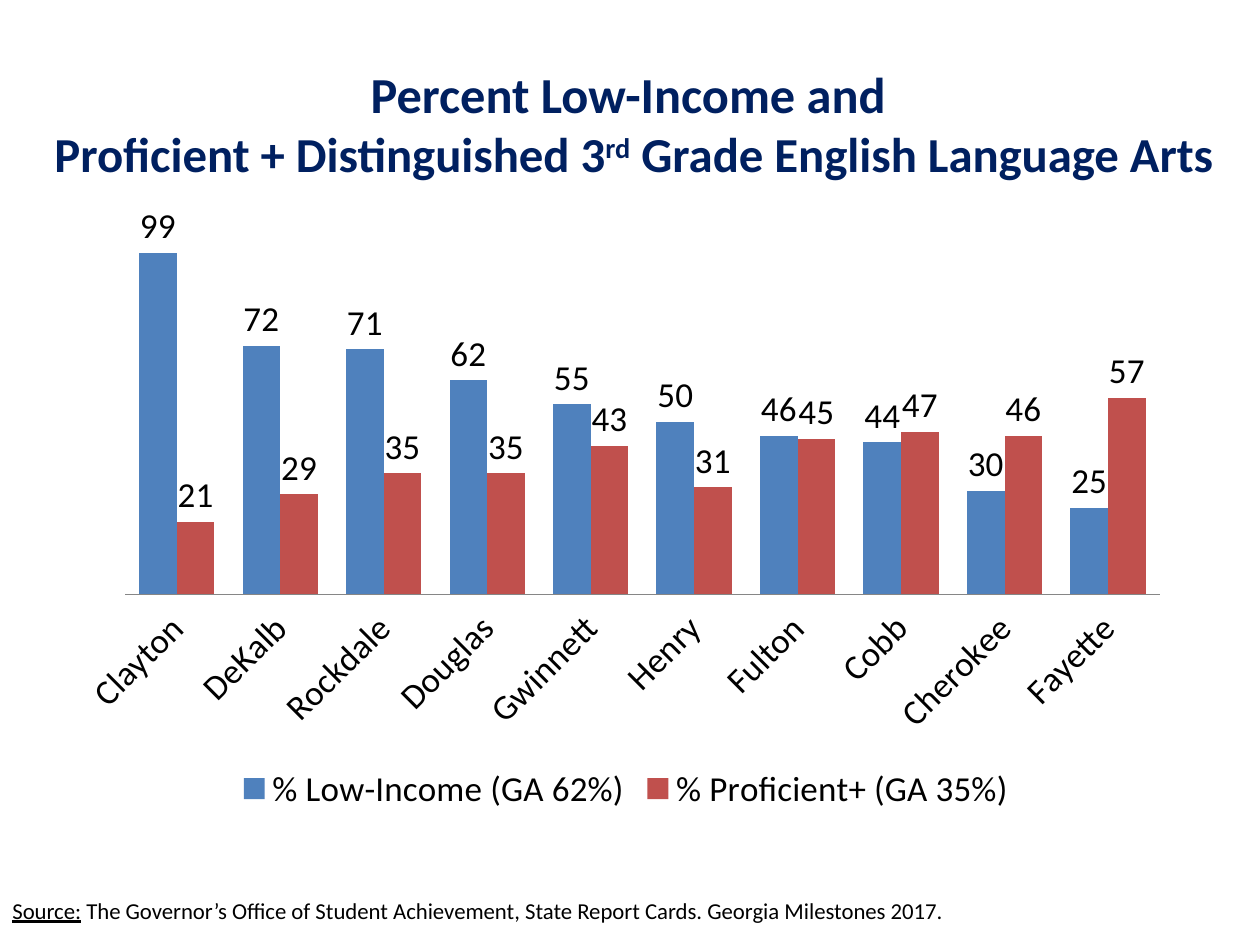
from dataclasses import dataclass

from lxml import etree
from pptx import Presentation
from pptx.chart.data import CategoryChartData
from pptx.dml.color import RGBColor
from pptx.enum.chart import XL_CHART_TYPE, XL_LABEL_POSITION, XL_LEGEND_POSITION, XL_TICK_LABEL_POSITION, XL_TICK_MARK
from pptx.enum.text import MSO_ANCHOR, MSO_AUTO_SIZE, PP_ALIGN
from pptx.oxml.ns import qn
from pptx.util import Cm, Pt

CLUSTERED = XL_CHART_TYPE.COLUMN_CLUSTERED
OUTSIDE_END = XL_LABEL_POSITION.OUTSIDE_END
LEGEND_BOTTOM = XL_LEGEND_POSITION.BOTTOM
LABELS_LOW = XL_TICK_LABEL_POSITION.LOW
NO_TICK = XL_TICK_MARK.NONE
MIDDLE = MSO_ANCHOR.MIDDLE
FIXED_SIZE = MSO_AUTO_SIZE.NONE
CENTER = PP_ALIGN.CENTER

COUNTIES = ["Clayton", "DeKalb", "Rockdale", "Douglas", "Gwinnett",
            "Henry", "Fulton", "Cobb", "Cherokee", "Fayette"]
SERIES = {
    "% Low-Income (GA 62%)": [99, 72, 71, 62, 55, 50, 46, 44, 30, 25],
    "% Proficient+ (GA 35%)": [21, 29, 35, 35, 43, 31, 45, 47, 46, 57],
}
PLOT_AREA = {"x": 0.043, "y": 0.029, "w": 0.944, "h": 0.631}


@dataclass(frozen=True)
class Theme:
    font: str = "Calibri"
    navy: RGBColor = RGBColor(0x00, 0x20, 0x60)
    black: RGBColor = RGBColor(0x00, 0x00, 0x00)
    gray: RGBColor = RGBColor(0x86, 0x86, 0x86)
    series: tuple = (RGBColor(0x4F, 0x81, 0xBD), RGBColor(0xC0, 0x50, 0x4D))
    title_size: float = 28.8
    subtitle_size: float = 27.9
    chart_size: float = 20
    source_size: float = 13


class SlideBuilder:
    """Adds styled elements to the current slide."""

    def __init__(self, slide, theme):
        self.slide = slide
        self.theme = theme

    def style(self, font, size, color):
        font.name = self.theme.font
        font.size = Pt(size)
        font.color.rgb = color

    def run(self, paragraph, text, size, color, bold=False, underline=False):
        run = paragraph.add_run()
        run.text = text
        self.style(run.font, size, color)
        run.font.bold = bold
        run.font.underline = underline
        return run

    def title(self, left, top, width, height):
        theme = self.theme
        shape = self.slide.shapes.title
        shape.left, shape.top, shape.width, shape.height = left, top, width, height
        frame = shape.text_frame
        frame.auto_size = FIXED_SIZE
        frame.vertical_anchor = MIDDLE
        paragraph = frame.paragraphs[0]
        paragraph.alignment = CENTER
        self.run(paragraph, "Percent Low-Income and ", theme.title_size, theme.navy, bold=True)
        paragraph.add_line_break()
        for text, raised in (("Proficient + Distinguished 3", False), ("rd", True),
                             (" Grade English Language Arts", False)):
            run = self.run(paragraph, text, theme.subtitle_size, theme.navy, bold=True)
            if raised:
                run.font._element.set("baseline", "30000")

    def source(self, left, top, width, height):
        theme = self.theme
        frame = self.slide.shapes.add_textbox(left, top, width, height).text_frame
        frame.word_wrap = True
        paragraph = frame.paragraphs[0]
        paragraph.line_spacing = 0.6
        self.run(paragraph, "Source:", theme.source_size, theme.black, underline=True)
        self.run(paragraph, " The Governor’s Office of Student Achievement, State Report Cards. "
                 "Georgia Milestones 2017.", theme.source_size, theme.black)

    def chart(self, left, top, width, height):
        theme = self.theme
        data = CategoryChartData(number_format="0")
        data.categories = COUNTIES
        for name, values in SERIES.items():
            data.add_series(name, values)
        chart = self.slide.shapes.add_chart(CLUSTERED, left, top, width, height, data).chart
        self.style(chart.font, theme.chart_size, theme.black)
        chart.has_title = False
        chart.has_legend = True
        chart.legend.position = LEGEND_BOTTOM
        chart.legend.include_in_layout = False
        self.axes(chart)
        self.columns(chart.plots[0])
        self.plot_layout(chart)

    def axes(self, chart):
        axis = chart.category_axis
        axis.major_tick_mark = NO_TICK
        axis.tick_label_position = LABELS_LOW
        axis.format.line.color.rgb = self.theme.gray
        self.style(axis.tick_labels.font, self.theme.chart_size, self.theme.black)
        axis._element.find(qn("c:txPr")).find(qn("a:bodyPr")).set("rot", "-2700000")
        axis = chart.value_axis
        axis.minimum_scale, axis.maximum_scale = 0, 120
        axis.has_major_gridlines = False
        axis.visible = False

    def columns(self, plot):
        plot.gap_width = 75
        plot.overlap = 0
        plot.vary_by_categories = False
        for series, color in zip(plot.series, self.theme.series):
            series.format.fill.solid()
            series.format.fill.fore_color.rgb = color
            labels = series.data_labels
            labels.show_value = True
            labels.number_format = "0"
            labels.number_format_is_linked = False
            labels.position = OUTSIDE_END
            self.style(labels.font, self.theme.chart_size, self.theme.black)

    def plot_layout(self, chart):
        plot_area = chart._chartSpace.find(qn("c:chart")).find(qn("c:plotArea"))
        layout = plot_area.find(qn("c:layout"))
        if layout is None:
            layout = etree.Element(qn("c:layout"))
            plot_area.insert(0, layout)
        manual = etree.SubElement(layout, qn("c:manualLayout"))
        settings = {"layoutTarget": "inner", "xMode": "edge", "yMode": "edge", **PLOT_AREA}
        for name, value in settings.items():
            etree.SubElement(manual, qn(f"c:{name}")).set("val", str(value))


def main():
    presentation = Presentation()
    presentation.slide_width, presentation.slide_height = Cm(25.4), Cm(19.05)
    slide = presentation.slides.add_slide(presentation.slide_layouts.get_by_name("Title Only"))
    builder = SlideBuilder(slide, Theme())
    builder.title(Cm(0.64), Cm(0.64), Cm(24.28), Cm(3.68))
    builder.source(Cm(0), Cm(18.14), Cm(22.23), Cm(0.58))
    builder.chart(Cm(1.57), Cm(3.25), Cm(22.1), Cm(13.23))
    presentation.save("out.pptx")


if __name__ == "__main__":
    main()
